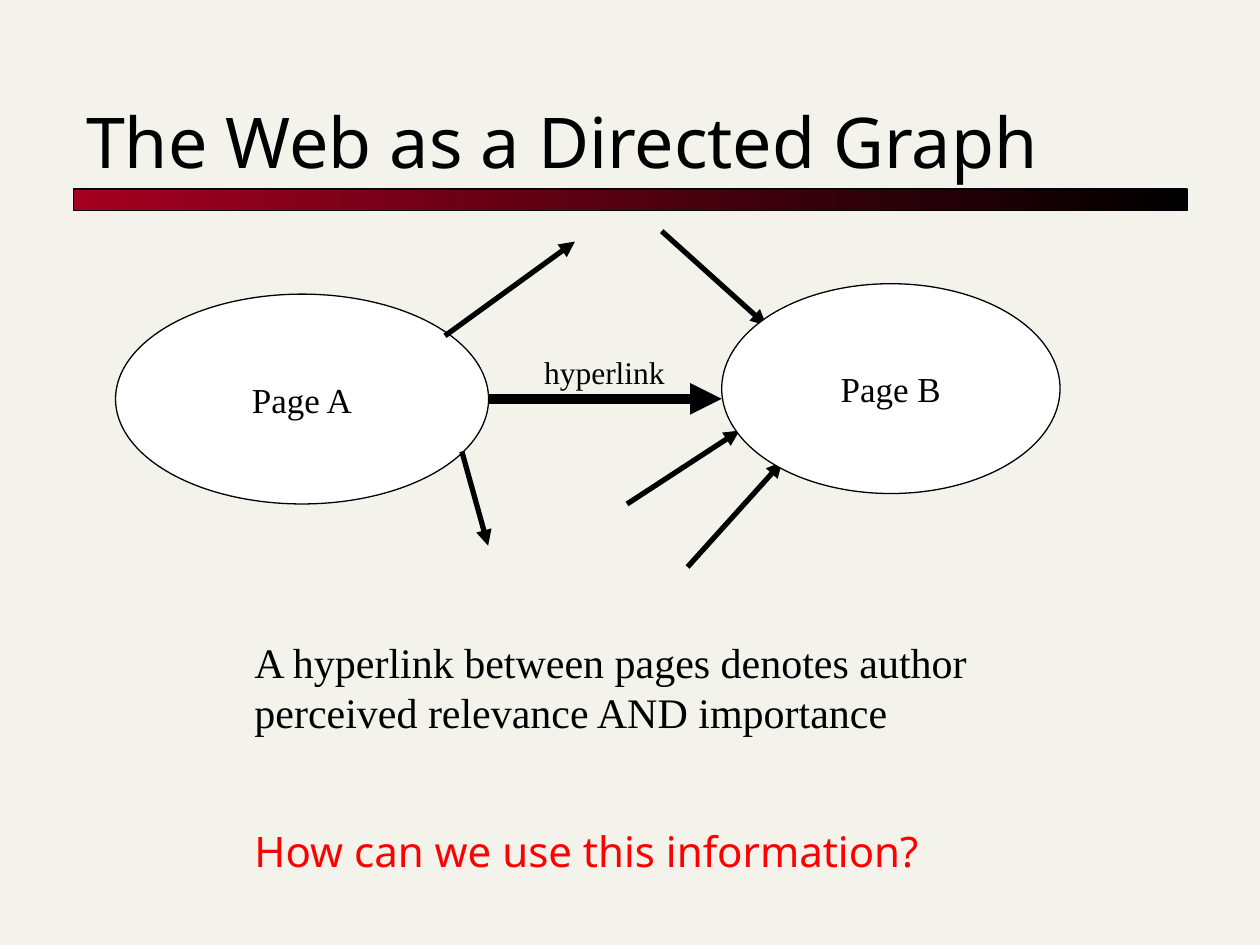
"""Builds a slide that shows the Web as a directed graph of linked pages."""
from lxml.etree import SubElement
from pptx import Presentation
from pptx.dml.color import RGBColor
from pptx.enum.shapes import MSO_CONNECTOR as Link, MSO_SHAPE as Kind
from pptx.enum.text import MSO_ANCHOR as Anchor, MSO_AUTO_SIZE as Fit, PP_ALIGN as Align
from pptx.oxml.ns import qn
from pptx.util import Cm, Pt

PAPER = RGBColor(0xF4, 0xF3, 0xEB)
BLACK = RGBColor(0, 0, 0)
WHITE = RGBColor(0xFF, 0xFF, 0xFF)
WINE = RGBColor(0xA5, 0x00, 0x21)
RED = RGBColor(0xFF, 0, 0)
SANS, SERIF = "Noto Sans", "Times New Roman"


def write(frame, text, size, font, color=BLACK, align=Align.LEFT, wrap=False):
    frame.word_wrap = wrap
    para = frame.paragraphs[0]
    para.alignment = align
    run = para.add_run()
    run.text = text
    run.font.size = Pt(size)
    run.font.name = font
    run.font.color.rgb = color


def draw_page(name, left, top, width):
    page = slide.shapes.add_shape(Kind.OVAL, Cm(left), Cm(top), Cm(width), Cm(4.23))
    page.shadow.inherit = False
    page.fill.solid()
    page.fill.fore_color.rgb = WHITE
    page.line.color.rgb = BLACK
    page.line.width = Pt(0.75)
    page.text_frame.vertical_anchor = Anchor.MIDDLE
    write(page.text_frame, name, 20, SERIF, align=Align.CENTER)


deck = Presentation()
deck.slide_width, deck.slide_height = Cm(25.4), Cm(19.05)
slide = deck.slides.add_slide(deck.slide_layouts[5])
slide.background.fill.solid()
slide.background.fill.fore_color.rgb = PAPER

bar = slide.shapes.add_shape(Kind.RECTANGLE, Cm(1.48), Cm(3.81), Cm(22.45), Cm(0.43))
bar.shadow.inherit = False
bar.fill.gradient()
bar.fill.gradient_angle = 0
for stop, color, place in zip(bar.fill.gradient_stops, (WINE, BLACK), (0, 1)):
    stop.color.rgb = color
    stop.position = place
bar.line.color.rgb = BLACK
bar.line.width = Pt(0.75)

title = slide.shapes.title
title.left, title.top, title.width, title.height = Cm(1.48), Cm(1.07), Cm(22.43), Cm(2.74)
title.text_frame.vertical_anchor = Anchor.BOTTOM
title.text_frame.auto_size = Fit.NONE
write(title.text_frame, "The Web as a Directed Graph", 40, SANS, wrap=True)

draw_page("Page A", 2.33, 5.93, 7.52)

arrows = [
    (9.84, 8.04, 14.55, 8.04, 6),
    (9.31, 9.1, 9.84, 11, 3),
    (8.97, 6.77, 11.59, 4.87, 3),
    (12.64, 10.16, 14.91, 8.68, 3),
    (13.86, 11.43, 15.77, 9.31, 3),
    (13.34, 4.66, 15.45, 6.56, 3),
]
for *ends, width in arrows:
    arrow = slide.shapes.add_connector(Link.STRAIGHT, *[Cm(end) for end in ends])
    arrow.line.color.rgb = BLACK
    arrow.line.width = Pt(width)
    SubElement(arrow.line._get_or_add_ln(), qn("a:tailEnd"), type="triangle")
    SubElement(arrow._element.spPr, qn("a:effectLst"))

draw_page("Page B", 14.55, 5.72, 6.82)

notes = [
    ("hyperlink", 10.72, 6.99, 2.95, 1.02, 18, SERIF, BLACK, False),
    ("A hyperlink between pages denotes author perceived relevance AND importance",
     4.88, 12.7, 15.04, 2.31, 24, SERIF, BLACK, True),
    ("How can we use this information?", 4.88, 16.51, 14.45, 1.27, 24, SANS, RED, False),
]
for text, left, top, width, height, size, font, color, wrap in notes:
    box = slide.shapes.add_textbox(Cm(left), Cm(top), Cm(width), Cm(height))
    box.text_frame.auto_size = Fit.SHAPE_TO_FIT_TEXT
    write(box.text_frame, text, size, font, color, wrap=wrap)

deck.save("out.pptx")
